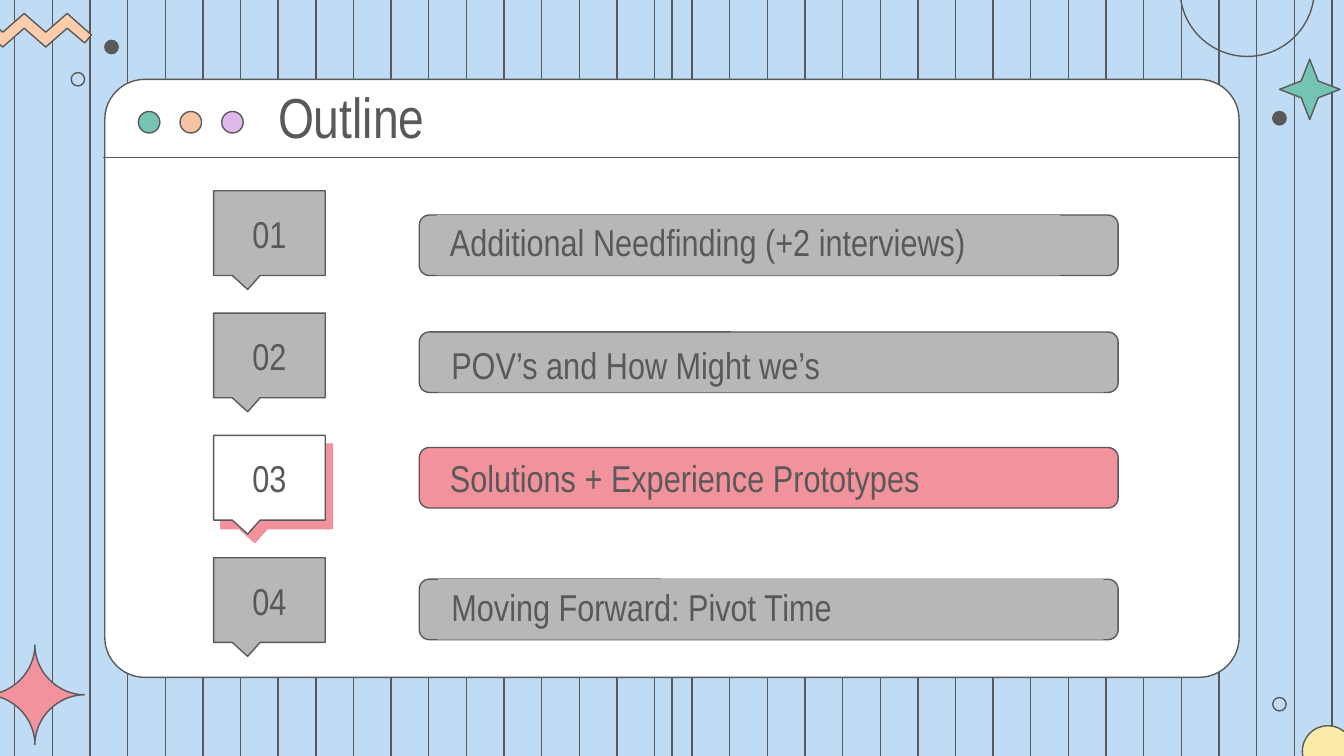
from lxml import etree
from pptx import Presentation
from pptx.dml.color import RGBColor
from pptx.enum import shapes, text
from pptx.oxml import ns
from pptx.util import Inches, Pt

COLORS = {
    "sky": "C0DCF5", "ink": "595959", "white": "FFFFFF", "gray": "B7B7B7",
    "pink": "F2929D", "green": "74C3B3", "peach": "F6C4A2", "apricot": "FFCDAB",
    "lilac": "E1B8EC", "yellow": "FAEBA8",
}
KIND = shapes.MSO_SHAPE


def style(shape, fill=None, outlined=True):
    shape.shadow.inherit = False
    if fill:
        shape.fill.solid()
        shape.fill.fore_color.rgb = RGBColor.from_string(COLORS[fill])
    else:
        shape.fill.background()
    if outlined:
        shape.line.color.rgb = RGBColor.from_string(COLORS["ink"])
        shape.line.width = Pt(0.75)
    else:
        shape.line.fill.background()
    return shape


def add_label(words, left, top, width, height, size=20, fill=None, align=text.PP_ALIGN.LEFT, spacing=1.0):
    if fill:
        box = style(page.shapes.add_shape(KIND.RECTANGLE, left, top, width, height), fill, False)
    else:
        box = page.shapes.add_textbox(left, top, width, height)
    frame = box.text_frame
    frame.word_wrap = True
    frame.vertical_anchor = text.MSO_ANCHOR.MIDDLE
    frame.margin_left = frame.margin_right = Inches(0.1)
    frame.margin_top = frame.margin_bottom = Inches(0.1)
    para = frame.paragraphs[0]
    para.alignment = align
    para.line_spacing = spacing
    span = para.add_run()
    span.text = words
    span.font.name = "Arial Narrow"
    span.font.size = Pt(size)
    span.font.color.rgb = RGBColor.from_string(COLORS["ink"])


deck = Presentation()
deck.slide_width = Inches(10)
deck.slide_height = Inches(5.625)
page = deck.slides.add_slide(deck.slide_layouts[6])
page.background.fill.solid()
page.background.fill.fore_color.rgb = RGBColor.from_string(COLORS["sky"])

stripes = [(0.11 + 0.28 * i, 0, 0.11 + 0.28 * i, 5.625) for i in range(36)]
stripes.append((5, 0, 5, 5.625))
divider = (9.22, 1.17, 0.77, 1.17)

for ends in stripes + [divider]:
    if ends == divider:
        window = page.shapes.add_shape(KIND.ROUNDED_RECTANGLE, Inches(0.78), Inches(0.59), Inches(8.44), Inches(4.45))
        window.adjustments[0] = 0.067
        style(window, "white")
    line = page.shapes.add_connector(shapes.MSO_CONNECTOR.STRAIGHT, *[Inches(v) for v in ends])
    line.line.color.rgb = RGBColor.from_string(COLORS["ink"])
    line.line.width = Pt(0.75)
    etree.SubElement(line._element.spPr, ns.qn("a:effectLst"))

circles = [
    (1.03, 0.83, 0.16, "green"), (1.34, 0.83, 0.16, "peach"), (1.65, 0.83, 0.16, "lilac"),
    (8.78, -0.58, 1, None), (9.69, 5.4, 0.38, "yellow"),
    (0.78, 0.3, 0.1, "ink"), (0.53, 0.54, 0.1, None),
    (9.47, 5.19, 0.1, None), (9.47, 0.83, 0.1, "ink"),
]
for left, top, size, fill in circles:
    style(page.shapes.add_shape(KIND.OVAL, Inches(left), Inches(top), Inches(size), Inches(size)), fill)

zigzag = [(-0.46, 0.1), (-0.62, 0.24), (-0.76, 0.12), (-0.81, 0.18), (-0.62, 0.35)]
zigzag += [(-0.46 + 0.16 * i, 0.35 if i % 2 else 0.21) for i in range(7)]
zigzag += [(0.63, 0.32), (0.68, 0.26)]
zigzag += [(0.5 - 0.16 * i, 0.24 if i % 2 else 0.1) for i in range(6)]

sparkle = []
for turn in range(4):
    for step in range(16):
        t = step / 16
        x = 0.37 * (1.38 * (1 - t) * t**2 + t**3)
        y = -0.37 * ((1 - t)**3 + 1.38 * (1 - t)**2 * t)
        for _ in range(turn):
            x, y = -y, x
        sparkle.append((0.26 + x, 5.17 + y))

for points, fill in ((zigzag, "apricot"), (sparkle, "pink")):
    corners = [(Inches(x), Inches(y)) for x, y in points]
    outline = page.shapes.build_freeform(*corners[0])
    outline.add_line_segments(corners[1:], close=True)
    style(outline.convert_to_shape(), fill)

star = page.shapes.add_shape(KIND.STAR_4_POINT, Inches(9.52), Inches(0.44), Inches(0.45), Inches(0.45))
star.adjustments[0] = 0.198
style(star, "green")

add_label("Outline", Inches(1.97), Inches(0.57), Inches(6.91), Inches(0.58), size=30.2)

topics = [
    ("Additional Needfinding (+2 interviews)", 1.6, (3.25, 1.6, 4.64, 0.45), 0.8),
    ("POV’s and How Might we’s", 2.47, (3.26, 2.5, 4.95, 0.42), 1.0),
    ("Solutions + Experience Prototypes", 3.33, (3.25, 3.33, 5.07, 0.45), 1.0),
    ("Moving Forward: Pivot Time", 4.31, (3.26, 4.31, 4.95, 0.45), 0.9),
]
for i, (topic, bar_top, area, spacing) in enumerate(topics):
    current = i == 2
    top = 1.42 + 0.91 * i
    callout = page.shapes.add_shape(
        KIND.ROUNDED_RECTANGULAR_CALLOUT, Inches(1.59), Inches(top), Inches(0.83), Inches(0.63))
    for k, value in enumerate((-0.195, 0.666, 0)):
        callout.adjustments[k] = value
    style(callout, "white" if current else "gray")
    if current:
        effects = callout._element.spPr.find(ns.qn("a:effectLst"))
        shadow = etree.SubElement(effects, ns.qn("a:outerShdw"), blurRad="0", dist=str(Pt(6)),
                                  dir="3000000", algn="bl", rotWithShape="0")
        etree.SubElement(shadow, ns.qn("a:srgbClr"), val=COLORS["pink"])
    patch = None if current else "gray"
    add_label(f"{i + 1:02d}", Inches(1.67), Inches(top + 0.09), Inches(0.67), Inches(0.45),
              fill=patch, align=text.PP_ALIGN.CENTER)

    bar = page.shapes.add_shape(KIND.ROUNDED_RECTANGLE, Inches(3.12), Inches(bar_top), Inches(5.2), Inches(0.45))
    bar.adjustments[0] = 0.167
    style(bar, "pink" if current else "gray")
    add_label(topic, *[Inches(v) for v in area], fill=patch, spacing=spacing)

deck.save("out.pptx")
